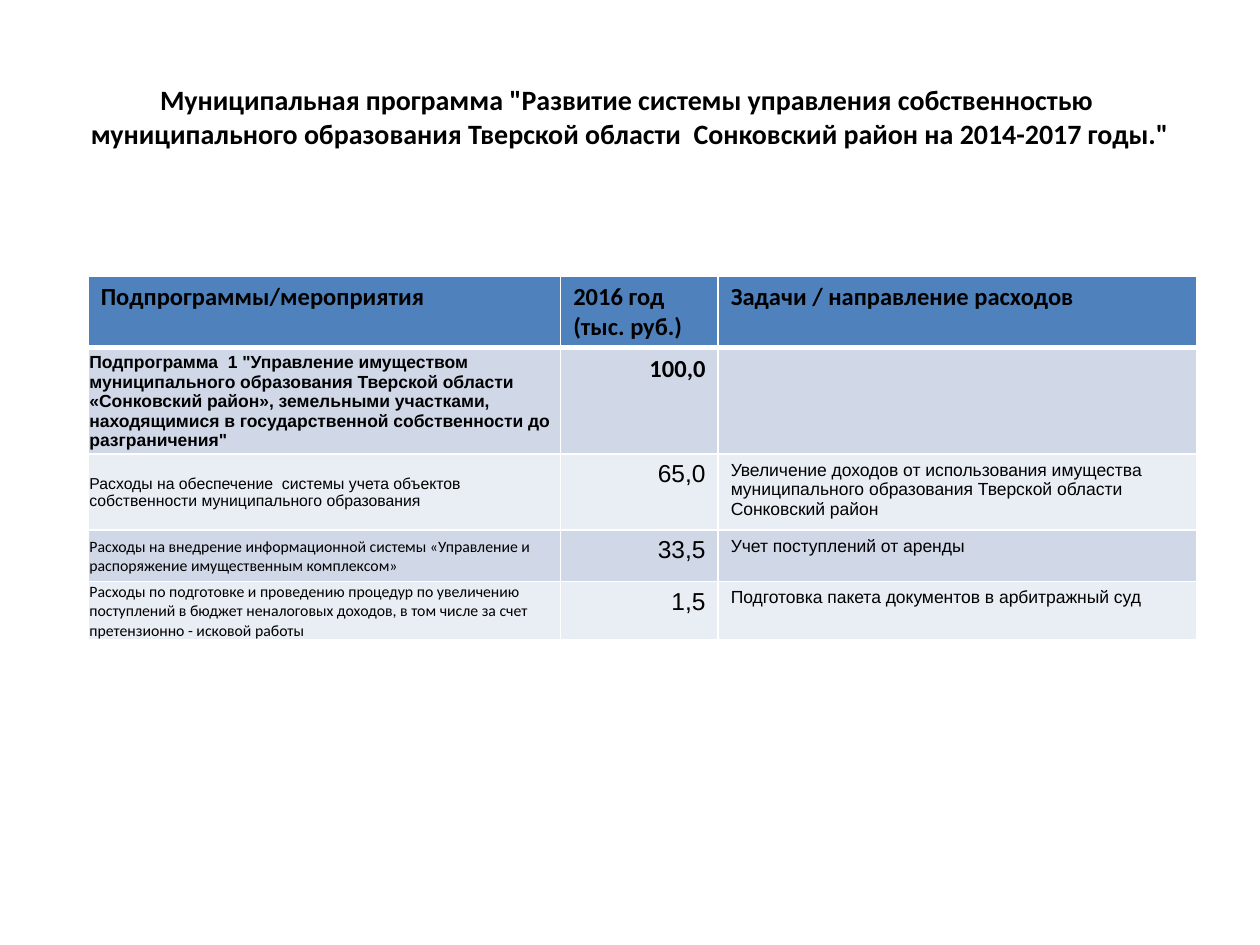
from lxml import etree
from pptx import Presentation
from pptx.dml.color import RGBColor
from pptx.enum.text import MSO_ANCHOR, PP_ALIGN
from pptx.oxml.ns import qn
from pptx.util import Inches, Pt

MID, TOP = MSO_ANCHOR.MIDDLE, MSO_ANCHOR.TOP
LEFT, RIGHT, CENTER = PP_ALIGN.LEFT, PP_ALIGN.RIGHT, PP_ALIGN.CENTER
COLORS = {"text": "000000", "head": "4F81BD", "odd": "D0D8E8",
          "even": "E9EDF4", "line": "FFFFFF"}

TITLE = ('Муниципальная программа "Развитие системы управления собственностью  '
         'муниципального образования Тверской области  Сонковский район '
         'на 2014-2017 годы."')
HEADS = ["Подпрограммы/мероприятия", "2016 год (тыс. руб.)",
         "Задачи / направление расходов"]
# Each row: measure, its font, amount, its font, task
ROWS = [
    ('Подпрограмма  1 "Управление имуществом муниципального образования '
     'Тверской области «Сонковский район», земельными участками, находящимися '
     'в государственной собственности до разграничения"',
     ("Arial", 10, True), "100,0", ("Calibri", 14, True), ""),
    ("Расходы на обеспечение  системы учета объектов собственности "
     "муниципального образования",
     ("Arial", 9, False), "65,0", ("Arial", 14, False),
     "Увеличение доходов от использования имущества муниципального "
     "образования Тверской области Сонковский район"),
    ("Расходы на внедрение информационной системы «Управление и распоряжение "
     "имущественным комплексом»",
     ("Calibri", 9, False), "33,5", ("Arial", 14, False),
     "Учет поступлений от аренды"),
    ("Расходы по подготовке и проведению процедур по увеличению поступлений "
     "в бюджет неналоговых доходов, в том числе за счет претензионно - "
     "исковой работы",
     ("Calibri", 9, False), "1,5", ("Arial", 14, False),
     "Подготовка пакета документов в арбитражный суд"),
]
WIDTHS = [3.75, 1.25, 3.8]
HEIGHTS = [0.57, 0.79, 0.56, 0.41, 0.46]


def color(name):
    return RGBColor.from_string(COLORS[name])


def write(frame, text, style, align=LEFT):
    par = frame.paragraphs[0]
    par.text = text
    par.alignment = align
    font = par.font
    font.name, size, font.bold = style
    font.size = Pt(size)
    font.color.rgb = color("text")


def edge(cell, side, width):
    line = etree.SubElement(cell._tc.get_or_add_tcPr(), qn("a:ln" + side),
                            w=str(Pt(width)))
    fill = etree.SubElement(line, qn("a:solidFill"))
    etree.SubElement(fill, qn("a:srgbClr"), val=COLORS["line"])


def paint(cell, fill, top, base):
    for side, width in (("L", 1), ("R", 1), ("T", top), ("B", base)):
        edge(cell, side, width)
    cell.fill.solid()
    cell.fill.fore_color.rgb = color(fill)


def add_title(slide, left, top, width, height):
    box = slide.shapes.add_textbox(Inches(left), Inches(top),
                                   Inches(width), Inches(height))
    frame = box.text_frame
    frame.word_wrap = True
    frame.vertical_anchor = MID
    write(frame, TITLE, ("Calibri", 16, True), CENTER)


def add_costs(slide, left, top):
    table = slide.shapes.add_table(
        len(HEIGHTS), len(WIDTHS), Inches(left), Inches(top),
        Inches(sum(WIDTHS)), Inches(sum(HEIGHTS))).table
    for col, width in zip(table.columns, WIDTHS):
        col.width = Inches(width)
    for row, height in zip(table.rows, HEIGHTS):
        row.height = Inches(height)

    # Header row
    for col, text in enumerate(HEADS):
        cell = table.cell(0, col)
        paint(cell, "head", 1, 3)
        write(cell.text_frame, text, ("Calibri", 14, True))

    # Measures with amounts and tasks
    for num, (name, face, sum_, bold, task) in enumerate(ROWS, 1):
        cells = [table.cell(num, col) for col in range(len(WIDTHS))]
        for cell in cells:
            paint(cell, "odd" if num % 2 else "even", 3 if num == 1 else 1, 1)
            cell.vertical_anchor = TOP
        first, mid, last = cells
        first.vertical_anchor = MID
        first.margin_left = first.margin_right = Inches(0.01)
        first.margin_top, first.margin_bottom = Inches(0.01), 0
        write(first.text_frame, name, face)
        write(mid.text_frame, sum_, bold, RIGHT)
        if task:
            write(last.text_frame, task, ("Arial", 10, False))


def main():
    deck = Presentation()
    deck.slide_width, deck.slide_height = Inches(10), Inches(7.5)
    slide = deck.slides.add_slide(deck.slide_layouts[6])
    add_title(slide, 0.5, 0.3, 9, 1.25)
    add_costs(slide, 0.7, 2.19)
    deck.save("out.pptx")


if __name__ == "__main__":
    main()
